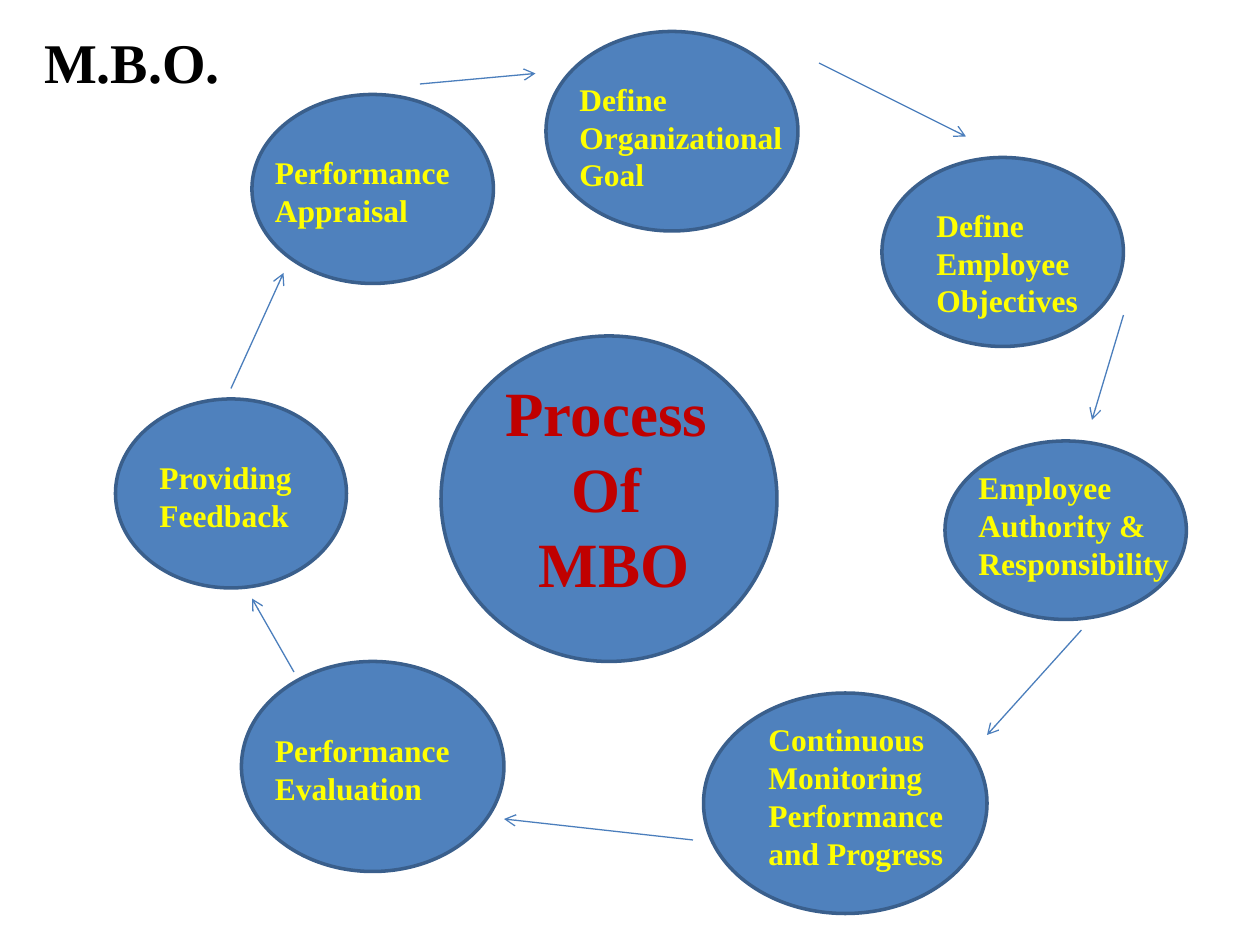
from lxml import etree
from pptx import Presentation
from pptx.dml.color import RGBColor
from pptx.enum import shapes, text
from pptx.oxml.ns import qn
from pptx import util as u

COLORS = {
    "title": "000000",
    "fill": "4F81BD",
    "outline": "3A5F8C",
    "arrow": "4B7EBC",
    "label": "FFFF00",
    "center": "C00000",
}
FONT = "Times New Roman"
COLS, ROWS = 120, 90
WIDTH, HEIGHT = u.Inches(10), u.Inches(7.5)

# Steps of the cycle: label, ellipse box, label box (column, row, columns, rows)
STEPS = [
    ("Define Organizational Goal", (52, 3, 24, 19), (54, 7, 22, 12.12)),
    ("Define Employee Objectives", (84, 15, 23, 18), (88, 19, 20, 12.12)),
    ("Employee Authority & Responsibility", (90, 42, 23, 17), (92, 44, 22, 12.12)),
    ("Continuous Monitoring Performance and Progress",
     (67, 66, 27, 21), (72, 68, 20, 15.72)),
    ("Performance Evaluation", (23, 63, 25, 20), (25, 69, 21, 8.52)),
    ("Providing Feedback", (11, 38, 22, 18), (14, 43, 16, 8.52)),
    ("Performance Appraisal", (24, 9, 23, 18), (25, 14, 20, 8.52)),
]

# Arrows: start column and row, end column and row
ARROWS = [
    (78, 6, 92, 13),
    (107, 30, 104, 40),
    (103, 60, 94, 70),
    (66, 80, 48, 78),
    (28, 64, 24, 57),
    (22, 37, 27, 26),
    (40, 8, 51, 7),
]


def grid(*cells):
    """Turn alternating column and row counts into slide lengths."""
    units = (WIDTH / COLS, HEIGHT / ROWS)
    return [u.Emu(round(c * units[i % 2])) for i, c in enumerate(cells)]


def rgb(name):
    return RGBColor.from_string(COLORS[name])


def write(tf, lines, size=18, color="label", align=None):
    tf.word_wrap = True
    for i, line in enumerate(lines):
        p = tf.paragraphs[0] if i == 0 else tf.add_paragraph()
        p.alignment = align
        r = p.add_run()
        r.text = line
        r.font.name, r.font.size, r.font.bold = FONT, u.Pt(size), True
        r.font.color.rgb = rgb(color)


def add_title(slide):
    slide.shapes.title.element.getparent().remove(slide.shapes.title.element)
    body = slide.placeholders[1]
    body.left, body.top, body.width, body.height = grid(3, 2, 108, 59.4)
    write(body.text_frame, ["M.B.O."], size=32, color="title")
    # Hanging indent without a bullet
    pPr = body.text_frame.paragraphs[0]._p.get_or_add_pPr()
    indent = u.Inches(0.38)
    pPr.set("marL", str(indent))
    pPr.set("indent", str(-indent))
    etree.SubElement(pPr, qn("a:buNone"))


def add_ellipse(slide, box):
    sp = slide.shapes.add_shape(shapes.MSO_SHAPE.OVAL, *grid(*box))
    sp.shadow.inherit = False
    sp.fill.solid()
    sp.fill.fore_color.rgb = rgb("fill")
    sp.line.color.rgb = rgb("outline")
    sp.line.width = u.Pt(2)


def add_label(slide, box, lines, **fmt):
    tf = slide.shapes.add_textbox(*grid(*box)).text_frame
    write(tf, lines, **fmt)
    tf.auto_size = text.MSO_AUTO_SIZE.SHAPE_TO_FIT_TEXT


def add_arrow(slide, ends):
    line = slide.shapes.add_connector(shapes.MSO_CONNECTOR.STRAIGHT, *grid(*ends))
    line.line.color.rgb = rgb("arrow")
    line.line.width = u.Pt(0.75)
    etree.SubElement(line.line._get_or_add_ln(), qn("a:tailEnd"), type="arrow")
    etree.SubElement(line._element.spPr, qn("a:effectLst"))


def main():
    prs = Presentation()
    prs.slide_width, prs.slide_height = WIDTH, HEIGHT
    slide = prs.slides.add_slide(prs.slide_layouts[1])
    add_title(slide)

    # Ellipses lie behind all labels
    add_ellipse(slide, (42, 32, 32, 31))
    for _, ellipse, _ in STEPS:
        add_ellipse(slide, ellipse)

    # Labels
    add_label(slide, (46, 35, 25, 23), ["Process ", "Of ", "MBO"],
              size=36, color="center", align=text.PP_ALIGN.CENTER)
    for label, _, box in STEPS:
        add_label(slide, box, [label])

    # Arrows around the cycle
    for ends in ARROWS:
        add_arrow(slide, ends)

    prs.save("out.pptx")


if __name__ == "__main__":
    main()
